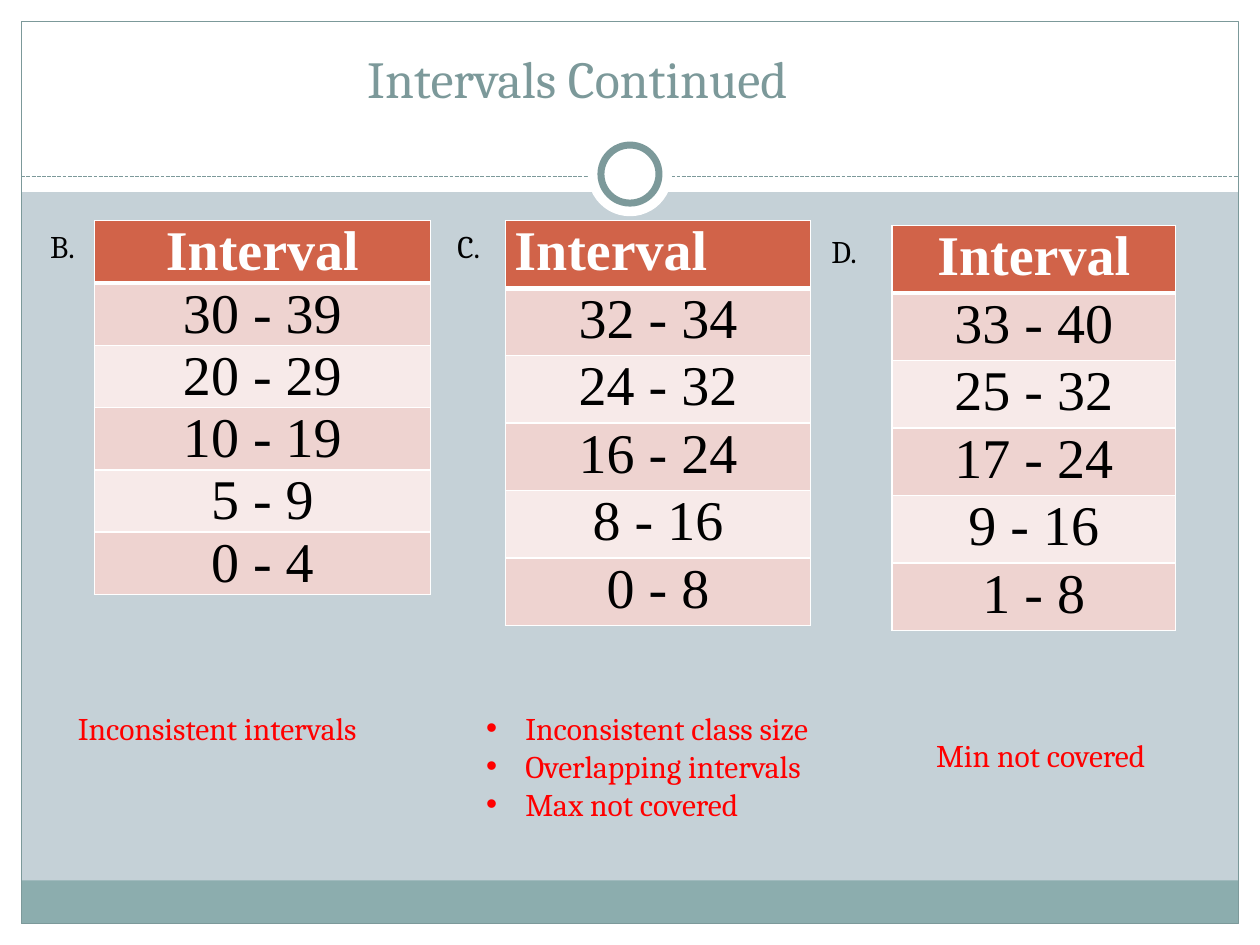
from lxml import etree
from pptx import Presentation
from pptx.dml.color import RGBColor
from pptx.enum.dml import MSO_LINE
from pptx.enum.shapes import MSO_CONNECTOR, MSO_SHAPE
from pptx.enum.text import MSO_ANCHOR, MSO_AUTO_SIZE, PP_ALIGN
from pptx.oxml.ns import qn
from pptx.util import Cm, Pt

RECTANGLE, OVAL = MSO_SHAPE.RECTANGLE, MSO_SHAPE.OVAL
LEFT, CENTER = PP_ALIGN.LEFT, PP_ALIGN.CENTER
WHITE = RGBColor(0xFF, 0xFF, 0xFF)
BLACK = RGBColor(0, 0, 0)
RED = RGBColor(0xFF, 0, 0)
MIST = RGBColor(0xC5, 0xD1, 0xD7)
TEAL = RGBColor(0x8C, 0xAD, 0xAE)
SLATE = RGBColor(0x7C, 0x99, 0x9A)
RUST = RGBColor(0xD1, 0x63, 0x49)
ROW_FILLS = RGBColor(0xEE, 0xD3, 0xD0), RGBColor(0xF7, 0xEA, 0xE9)
HEADING_FONT, TABLE_FONT = "Cambria", "Times New Roman"

# Content; positions and sizes are in centimetres
WIDTH, HEIGHT, MARGIN = 25.4, 19.05, 0.43
TITLE = "Intervals Continued"
HEADER = "Interval"
# left, top, width, row height, header alignment, intervals
TABLES = [
    (1.9, 4.45, 6.78, 1.25, CENTER, ["30 - 39", "20 - 29", "10 - 19", "5 - 9", "0 - 4"]),
    (10.19, 4.45, 6.15, 1.36, LEFT, ["32 - 34", "24 - 32", "16 - 24", "8 - 16", "0 - 8"]),
    (17.98, 4.55, 5.72, 1.36, CENTER, ["33 - 40", "25 - 32", "17 - 24", "9 - 16", "1 - 8"]),
]
# left, top, width, height, colour, lines
LABELS = [
    (0.76, 4.45, 1.14, 1.02, BLACK, ["B."]),
    (8.97, 4.45, 1.14, 1.02, BLACK, ["C."]),
    (16.51, 4.55, 1.19, 1.02, BLACK, ["D."]),
    (1.32, 14.17, 6.99, 1.02, RED, ["Inconsistent intervals"]),
    (9.55, 14.17, 7.9, 3.33, RED,
     ["Inconsistent class size", "Overlapping intervals", "Max not covered"]),
    (18.62, 14.71, 5.28, 1.02, RED, ["Min not covered"]),
]


def add_panel(page, kind, left, top, width, height, fill=None, line_width=None):
    panel = page.shapes.add_shape(kind, Cm(left), Cm(top), Cm(width), Cm(height))
    panel.shadow.inherit = False
    if fill is None:
        panel.fill.background()
    else:
        panel.fill.solid()
        panel.fill.fore_color.rgb = fill
    if line_width is None:
        panel.line.fill.background()
    else:
        panel.line.color.rgb = SLATE
        panel.line.width = Pt(line_width)


def style_text(para, font, size, color, align=None, bold=False):
    para.alignment = align
    for span in para.runs:
        span.font.name, span.font.size = font, Pt(size)
        span.font.bold, span.font.color.rgb = bold, color


def set_borders(cell, bottom_width):
    properties = cell._tc.get_or_add_tcPr()
    widths = {"a:lnL": 1, "a:lnR": 1, "a:lnT": 1, "a:lnB": bottom_width}
    for position, (side, width) in enumerate(widths.items()):
        line = etree.Element(qn(side), w=str(Pt(width)))
        fill = etree.SubElement(line, qn("a:solidFill"))
        etree.SubElement(fill, qn("a:srgbClr"), val=str(WHITE))
        properties.insert(position, line)


def add_interval_table(page, left, top, width, row_height, header_align, intervals):
    rows = [HEADER, *intervals]
    frame = page.shapes.add_table(len(rows), 1, Cm(left), Cm(top), Cm(width),
                                  Cm(row_height * len(rows)))
    for index, text in enumerate(rows):
        is_header = index == 0
        frame.table.rows[index].height = Cm(row_height)
        cell = frame.table.cell(index, 0)
        cell.margin_left = cell.margin_right = Cm(0.18)
        cell.margin_top = cell.margin_bottom = 0
        cell.text_frame.text = text
        style_text(cell.text_frame.paragraphs[0], TABLE_FONT, 32,
                   WHITE if is_header else BLACK,
                   header_align if is_header else CENTER, is_header)
        cell.fill.solid()
        cell.fill.fore_color.rgb = RUST if is_header else ROW_FILLS[(index - 1) % 2]
        set_borders(cell, 3 if is_header else 1)


def add_bullet(para):
    properties = para._p.get_or_add_pPr()
    properties.set("marL", str(Cm(0.79)))
    properties.set("indent", str(-Cm(0.79)))
    etree.SubElement(properties, qn("a:buFont"), typeface="Arial")
    etree.SubElement(properties, qn("a:buChar"), char="•")


def add_label(page, left, top, width, height, color, lines):
    box = page.shapes.add_textbox(Cm(left), Cm(top), Cm(width), Cm(height))
    box.text_frame.text = "\n".join(lines)
    box.text_frame.word_wrap = False
    box.text_frame.auto_size = MSO_AUTO_SIZE.SHAPE_TO_FIT_TEXT
    for para in box.text_frame.paragraphs:
        style_text(para, HEADING_FONT, 18, color)
        if len(lines) > 1:
            add_bullet(para)


def add_frame(page):
    inner_width = WIDTH - 2 * MARGIN
    inner_bottom = HEIGHT - MARGIN
    # White margins and header band
    add_panel(page, RECTANGLE, 0, inner_bottom, WIDTH, MARGIN, WHITE)
    add_panel(page, RECTANGLE, 0, 0, WIDTH, 3.87, WHITE)
    for left in (0, WIDTH - MARGIN):
        add_panel(page, RECTANGLE, left, 0, MARGIN, HEIGHT, WHITE)
    # Footer band and outline
    add_panel(page, RECTANGLE, MARGIN, inner_bottom - 0.87, inner_width, 0.87, TEAL)
    add_panel(page, RECTANGLE, MARGIN, MARGIN, inner_width, HEIGHT - 2 * MARGIN,
              line_width=0.75)
    # Dashed divider
    divider = page.shapes.add_connector(MSO_CONNECTOR.STRAIGHT, Cm(MARGIN), Cm(3.56),
                                        Cm(WIDTH - MARGIN), Cm(3.56))
    divider.line.color.rgb = SLATE
    divider.line.width = Pt(0.75)
    divider.line.dash_style = MSO_LINE.SQUARE_DOT
    etree.SubElement(divider._element.spPr, qn("a:effectLst"))
    # Ring centred on the divider
    for size, line_width in ((1.7, None), (1.17, 4)):
        add_panel(page, OVAL, (WIDTH - size) / 2, 3.51 - size / 2, size, size,
                  WHITE, line_width)


def main():
    deck = Presentation()
    deck.slide_width, deck.slide_height = Cm(WIDTH), Cm(HEIGHT)
    page = deck.slides.add_slide(deck.slide_layouts[5])
    page.background.fill.solid()
    page.background.fill.fore_color.rgb = MIST
    add_frame(page)

    # Title, raised above the header band
    title = page.shapes.title
    page.shapes._spTree.append(title._element)
    title.left, title.top, title.width, title.height = Cm(1.27), Cm(0.76), Cm(20.75), Cm(1.57)
    title.text_frame.text = TITLE
    title.text_frame.vertical_anchor = MSO_ANCHOR.BOTTOM
    style_text(title.text_frame.paragraphs[0], HEADING_FONT, 29.7, SLATE, CENTER)

    # Tables and comments
    for table in TABLES:
        add_interval_table(page, *table)
    for label in LABELS:
        add_label(page, *label)
    deck.save("out.pptx")


if __name__ == "__main__":
    main()
